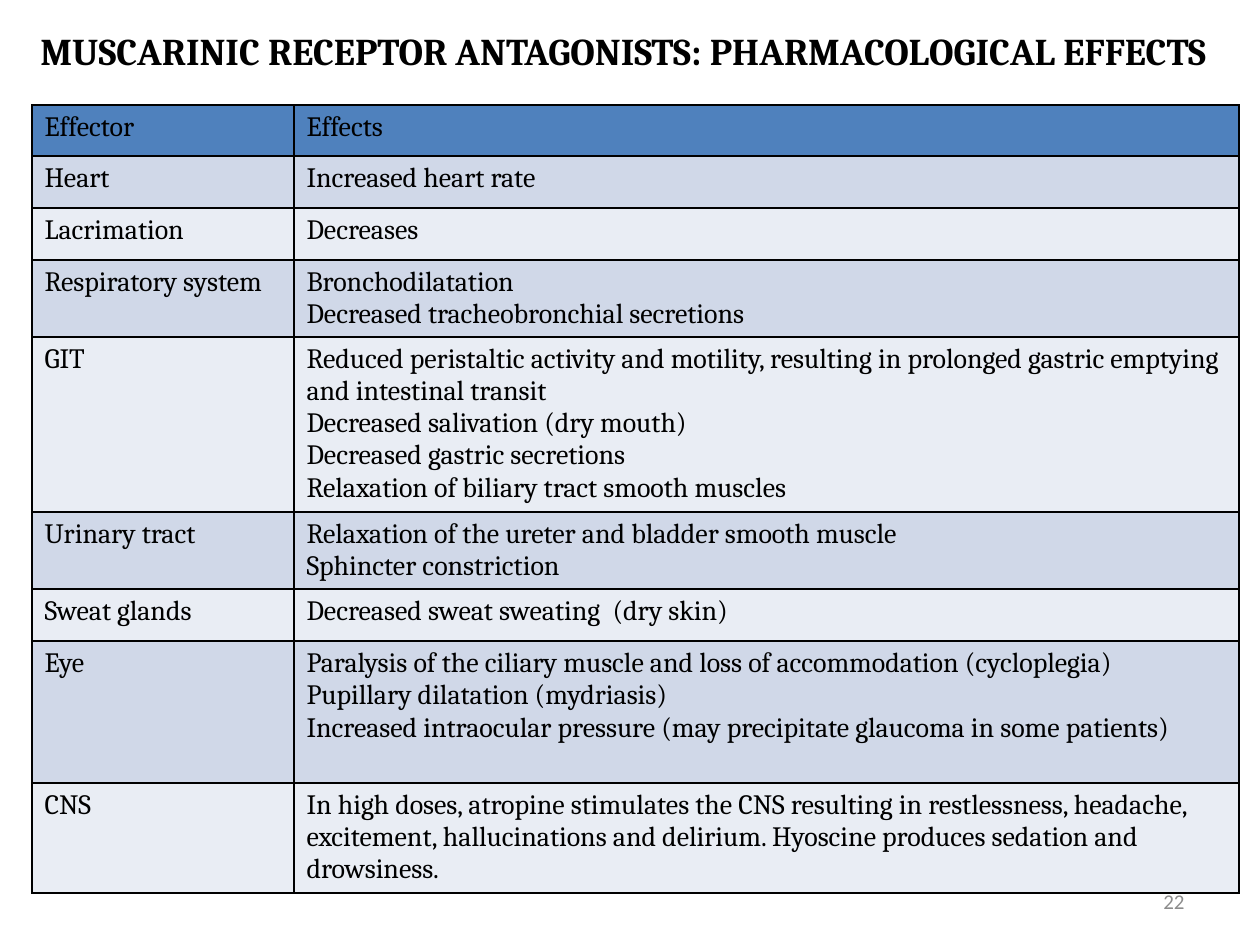
from lxml import etree
from pptx import Presentation, util as u
from pptx.dml.color import RGBColor
from pptx.enum import text as t
from pptx.oxml.ns import qn

PX = u.Inches(1) / 126
INK = {"text": "000000", "head": "4F81BD", "odd": "D0D8E8",
       "even": "E9EDF4", "rule": "000000", "page": "8C8C8C"}
TITLE = {"name": "Cambria", "size": u.Pt(21.6), "bold": True}
BODY = {"name": "Cambria", "size": u.Pt(16), "bold": False}
PAGE = {"name": "Calibri", "size": u.Pt(12)}
COLS = (262, 945)
ROWS = [
    (51, "Effector", ["Effects"]),
    (52, "Heart", ["Increased heart rate"]),
    (52, "Lacrimation", ["Decreases"]),
    (77, "Respiratory system", ["Bronchodilatation", "Decreased tracheobronchial secretions"]),
    (175, "GIT", [
        "Reduced peristaltic activity and motility, resulting in prolonged "
        "gastric emptying and intestinal transit",
        "Decreased salivation (dry mouth)",
        "Decreased gastric secretions",
        "Relaxation of biliary tract smooth muscles"]),
    (77, "Urinary tract", ["Relaxation of the ureter and bladder smooth muscle",
                           "Sphincter constriction"]),
    (52, "Sweat glands", ["Decreased sweat sweating  (dry skin)"]),
    (142, "Eye", [
        "Paralysis of the ciliary muscle and loss of accommodation (cycloplegia)",
        "Pupillary dilatation (mydriasis)",
        "Increased intraocular pressure (may precipitate glaucoma in some patients)"]),
    (110, "CNS", [
        "In high doses, atropine stimulates the CNS resulting in restlessness, "
        "headache, excitement, hallucinations and delirium. Hyoscine produces "
        "sedation and drowsiness."]),
]


def px(n):
    return u.Emu(round(n * PX))


def write(frame, lines, look, ink, align=t.PP_ALIGN.LEFT):
    """Put one paragraph per line into the frame, all in one look."""
    frame.word_wrap = True
    frame.text = "\n".join(lines)
    for para in frame.paragraphs:
        para.alignment = align
        for run in para.runs:
            for key, val in look.items():
                setattr(run.font, key, val)
            run.font.color.rgb = RGBColor.from_string(INK[ink])


def label(slide, box, line, look, ink, align=t.PP_ALIGN.LEFT):
    frame = slide.shapes.add_textbox(*map(px, box)).text_frame
    frame.vertical_anchor = t.MSO_ANCHOR.MIDDLE
    write(frame, [line], look, ink, align)


def edge(cell):
    """Rule all four sides; borders must come before the fill in tcPr."""
    props = cell._tc.get_or_add_tcPr()
    for i, side in enumerate(("lnL", "lnR", "lnT", "lnB")):
        line = etree.Element(qn("a:" + side), w=str(u.Pt(1)))
        fill = etree.SubElement(line, qn("a:solidFill"))
        etree.SubElement(fill, qn("a:srgbClr"), val=INK["rule"])
        props.insert(i, line)


def effects(slide, left, top):
    """Draw the table; a slim bottom margin keeps rows at their set height."""
    high = sum(row[0] for row in ROWS)
    grid = slide.shapes.add_table(len(ROWS), len(COLS), px(left), px(top),
                                  px(sum(COLS)), px(high)).table
    for col, wide in zip(grid.columns, COLS):
        col.width = px(wide)
    for i, (tall, organ, lines) in enumerate(ROWS):
        grid.rows[i].height = px(tall)
        tone = "head" if i == 0 else "odd" if i % 2 else "even"
        for cell, part in zip(grid.rows[i].cells, ([organ], lines)):
            write(cell.text_frame, part, BODY, "text")
            cell.margin_bottom = px(1)
            cell.fill.solid()
            cell.fill.fore_color.rgb = RGBColor.from_string(INK[tone])
            edge(cell)


def main():
    deck = Presentation()
    deck.slide_width, deck.slide_height = px(1260), px(945)
    slide = deck.slides.add_slide(deck.slide_layouts[6])
    label(slide, (28, 0, 1207, 100),
          "MUSCARINIC RECEPTOR ANTAGONISTS: PHARMACOLOGICAL EFFECTS", TITLE, "text")
    effects(slide, 32, 105)
    label(slide, (903, 876, 294, 50), "22", PAGE, "page", t.PP_ALIGN.RIGHT)
    deck.save("out.pptx")


if __name__ == "__main__":
    main()
